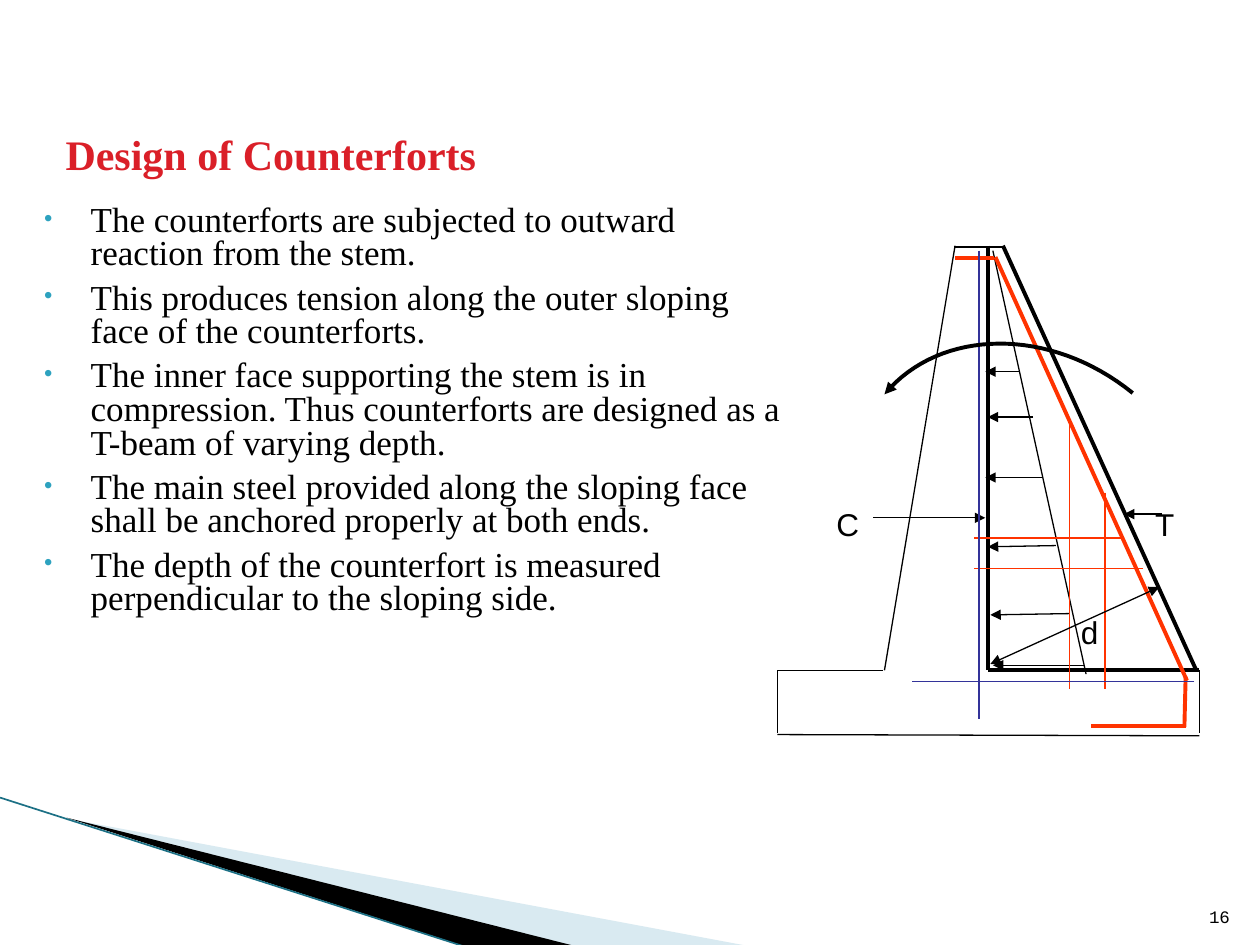
from lxml.etree import SubElement
from pptx import Presentation
from pptx.dml.color import RGBColor
from pptx.enum.shapes import MSO_CONNECTOR
from pptx.enum.text import MSO_ANCHOR, MSO_AUTO_SIZE, PP_ALIGN
from pptx.oxml.ns import qn
from pptx.util import Inches, Pt

COLORS = {"text": "000000", "title": "DA1F28", "bullet": "2DA2BF", "steel": "FF3300",
          "axis": "333399", "band": "A0CBDC", "edge": "1C7085"}
THIN, MEDIUM, THICK = 0.75, 1.5, 2.25

POINTS = [
    "The counterforts are subjected to outward reaction from the stem.",
    "This produces tension along the outer sloping face of the counterforts.",
    "The inner face supporting the stem is in compression. Thus counterforts are "
    "designed as a T-beam of varying depth.",
    "The main steel provided along the sloping face shall be anchored properly at both ends.",
    "The depth of the counterfort is measured perpendicular to the sloping side.",
]
WALL_LINES = [
    (7.57, 1.96, 7.96, 1.96, MEDIUM),
    (7.84, 1.95, 7.84, 5.32, THICK),
    (7.58, 1.95, 7.02, 5.32, THIN),
    (6.17, 5.83, 9.52, 5.84, THIN),
    (7.84, 5.32, 9.52, 5.32, THICK),
    (6.17, 5.32, 7.01, 5.32, THIN),
    (6.17, 5.32, 6.17, 5.82, THIN),
    (9.52, 5.32, 9.52, 5.82, THIN),
    (9.49, 5.31, 7.96, 1.95, THICK),
    (7.88, 1.99, 8.62, 5.35, THIN),
]
FORCE_ARROWS = [
    (8.09, 2.95, 7.82, 2.95),
    (8.2, 3.31, 7.84, 3.31),
    (8.27, 3.79, 7.82, 3.79),
    (8.38, 4.33, 7.84, 4.34),
    (8.49, 4.87, 7.86, 4.88),
    (8.6, 5.28, 7.88, 5.28),
    (9.22, 4.08, 8.92, 4.08),
    (6.93, 4.11, 7.82, 4.11),
]
STEEL_LINES = [
    (9.42, 5.4, 7.9, 2.04, THICK),
    (9.41, 5.37, 9.4, 5.77, THICK),
    (9.41, 5.76, 8.66, 5.76, THICK),
    (7.89, 2.05, 7.58, 2.05, THICK),
    (8.49, 3.31, 8.49, 5.47, THIN),
    (8.77, 3.91, 8.77, 5.47, THIN),
    (8.92, 4.27, 7.73, 4.27, THIN),
    (9.07, 4.51, 7.73, 4.51, THIN),
]
AXIS_LINES = [(7.77, 1.99, 7.77, 5.71), (9.48, 5.41, 7.24, 5.41)]
LABELS = [("T", 9.07, 3.96, 0.6), ("C", 6.54, 3.96, 0.74), ("d", 8.48, 4.82, 0.6)]
MOMENT_CURVE = [(7.02, 3.13), (7.46, 2.6), (8.34, 2.59), (8.99, 3.12)]


def bezier(controls, steps=32):
    def position(t):
        weights = ((1 - t) ** 3, 3 * t * (1 - t) ** 2, 3 * t ** 2 * (1 - t), t ** 3)
        return tuple(sum(w * c[axis] for w, c in zip(weights, controls)) for axis in (0, 1))
    return [position(step / steps) for step in range(steps + 1)]


class SlideBuilder:
    def __init__(self, slide):
        self.slide = slide
        self.shapes = slide.shapes

    def color(self, name):
        return RGBColor.from_string(COLORS[name])

    def font(self, paragraph, name, size, color="text", bold=False):
        font = paragraph.font
        font.name, font.size, font.bold = name, Pt(size), bold
        font.color.rgb = self.color(color)

    def place(self, shape, left, top, width, height):
        shape.left, shape.top = Inches(left), Inches(top)
        shape.width, shape.height = Inches(width), Inches(height)

    def stroke(self, shape, color, width, ends=()):
        shape.line.color.rgb = self.color(color)
        shape.line.width = Pt(width)
        for end in ends:
            SubElement(shape.line._get_or_add_ln(), qn(f"a:{end}"), type="triangle")

    def line(self, x1, y1, x2, y2, width=THIN, color="text", ends=()):
        connector = self.shapes.add_connector(
            MSO_CONNECTOR.STRAIGHT, Inches(x1), Inches(y1), Inches(x2), Inches(y2))
        self.stroke(connector, color, width, ends)
        SubElement(connector._element.spPr, qn("a:effectLst"))

    def outline(self, points, closed):
        corners = [(Inches(x), Inches(y)) for x, y in points]
        builder = self.shapes.build_freeform(*corners[0])
        builder.add_line_segments(corners[1:], close=closed)
        shape = builder.convert_to_shape()
        shape.shadow.inherit = False
        return shape

    def area(self, points, color, opacity=100):
        shape = self.outline(points, True)
        shape.fill.solid()
        shape.fill.fore_color.rgb = self.color(color)
        shape.line.fill.background()
        if opacity < 100:
            tint = shape._element.spPr.find(f"{qn('a:solidFill')}/{qn('a:srgbClr')}")
            SubElement(tint, qn("a:alpha"), val=str(opacity * 1000))

    def curve(self, controls):
        shape = self.outline(bezier(controls), False)
        shape.fill.background()
        self.stroke(shape, "text", THICK, ["headEnd"])

    def label(self, text, left, top, width, size=18, name="Arial",
              align=PP_ALIGN.LEFT, anchor=MSO_ANCHOR.TOP):
        box = self.shapes.add_textbox(Inches(left), Inches(top), Inches(width), Inches(0.4))
        frame = box.text_frame
        frame.word_wrap, frame.vertical_anchor = True, anchor
        paragraph = frame.paragraphs[0]
        paragraph.text, paragraph.alignment = text, align
        self.font(paragraph, name, size)

    def title(self, text):
        shape = self.shapes.title
        self.place(shape, 0.42, 0.47, 5.33, 1.5)
        frame = shape.text_frame
        frame.auto_size, frame.vertical_anchor = MSO_AUTO_SIZE.NONE, MSO_ANCHOR.MIDDLE
        paragraph = frame.paragraphs[0]
        paragraph.text, paragraph.alignment = text, PP_ALIGN.LEFT
        self.font(paragraph, "Times New Roman", 24, "title", True)

    def bullets(self, items):
        shape = self.slide.placeholders[1]
        self.place(shape, 0.25, 1.58, 6.08, 5)
        frame = shape.text_frame
        frame.auto_size = MSO_AUTO_SIZE.NONE
        for index, item in enumerate(items):
            paragraph = frame.add_paragraph() if index else frame.paragraphs[0]
            paragraph.text = item
            paragraph.line_spacing = 0.8
            paragraph.space_before = Pt(6 if index else 0)
            properties = paragraph._p.get_or_add_pPr()
            properties.set("marL", str(Inches(0.37)))
            properties.set("indent", str(-Inches(0.37)))
            bullet_color = SubElement(properties, qn("a:buClr"))
            SubElement(bullet_color, qn("a:srgbClr"), val=COLORS["bullet"])
            SubElement(properties, qn("a:buSzPct"), val="68000")
            SubElement(properties, qn("a:buFont"), typeface="Arial")
            SubElement(properties, qn("a:buChar"), char="•")
            self.font(paragraph, "Times New Roman", 20)


def main():
    presentation = Presentation()
    presentation.slide_width, presentation.slide_height = Inches(10), Inches(7.5)
    builder = SlideBuilder(presentation.slides.add_slide(presentation.slide_layouts[1]))

    builder.area([(0.55, 6.5), (5.95, 7.51), (4.56, 7.51)], "band", 40)
    builder.area([(0.53, 6.49), (4.57, 7.51), (3.72, 7.52)], "text")
    builder.line(0, 6.33, 3.71, 7.52, 0.95, "edge")
    builder.label("16", 9.46, 7.01, 0.4, 10, "Courier New", PP_ALIGN.RIGHT, MSO_ANCHOR.BOTTOM)
    builder.title("Design of Counterforts")
    builder.bullets(POINTS)

    for wall_line in WALL_LINES:
        builder.line(*wall_line)
    for arrow in FORCE_ARROWS:
        builder.line(*arrow, ends=["tailEnd"])
    for steel_line in STEEL_LINES:
        builder.line(*steel_line, color="steel")
    builder.line(7.86, 5.27, 9.2, 4.66, ends=["headEnd", "tailEnd"])
    for label in LABELS:
        builder.label(*label)
    for axis_line in AXIS_LINES:
        builder.line(*axis_line, color="axis")
    builder.curve(MOMENT_CURVE)

    presentation.save("out.pptx")


if __name__ == "__main__":
    main()
